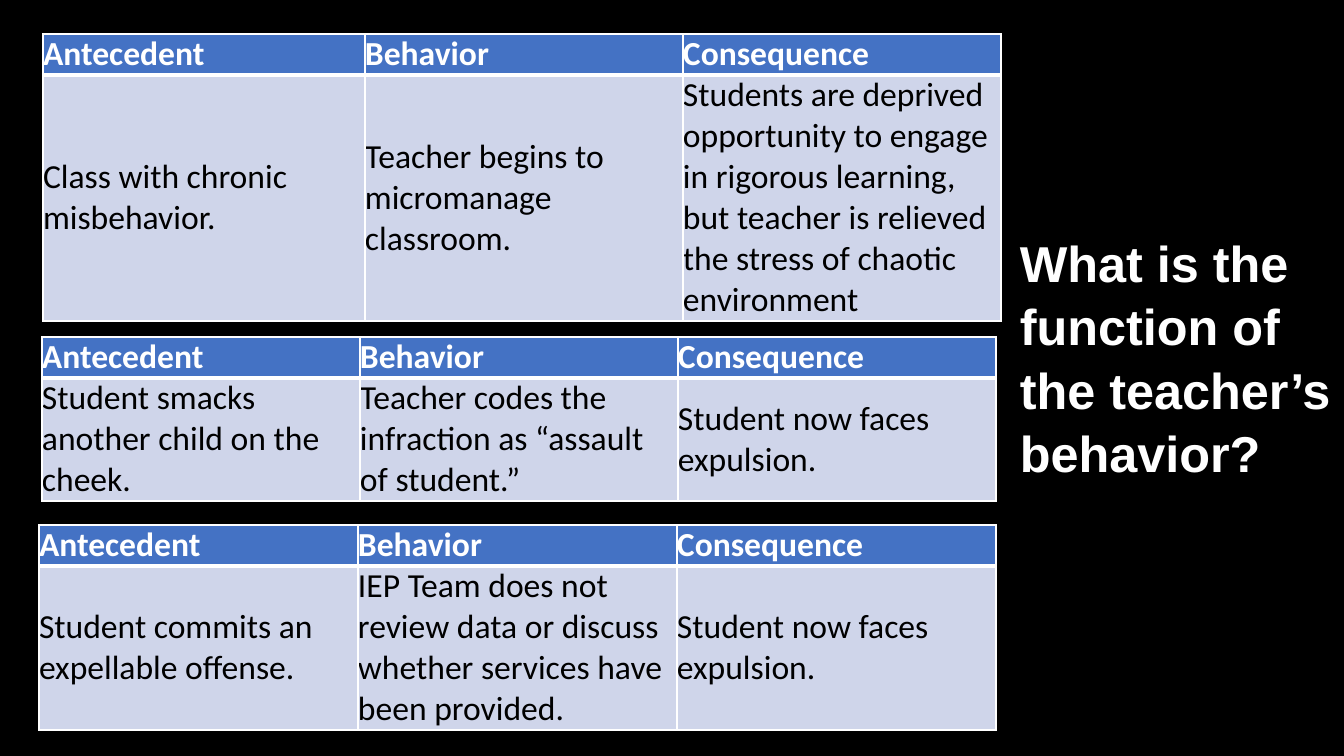
from dataclasses import dataclass

from lxml.etree import SubElement
from pptx import Presentation
from pptx.dml.color import RGBColor as RGB
from pptx.enum.text import MSO_ANCHOR as Anchor
from pptx.oxml import parse_xml
from pptx.oxml.ns import nsdecls, qn
from pptx.util import Emu, Pt


@dataclass(frozen=True)
class Theme:
    """Colours, fonts and type sizes of the slide."""
    back: str = "000000"
    head: str = "4472C4"
    body: str = "CFD5EA"
    light: str = "FFFFFF"
    dark: str = "000000"
    table_font: str = "Calibri"
    question_font: str = "Arial"
    table_size: int = 24
    question_size: int = 36


THEME = Theme()
HEADINGS = ("Antecedent", "Behavior", "Consequence")
HEAD_HEIGHT = 41
QUESTION = "What is the function of the teacher’s behavior?"
CASES = (
    ((43, 34, 958, 287), (322, 318, 318),
     ("Class with chronic misbehavior.",
      "Teacher begins to micromanage classroom.",
      "Students are deprived opportunity to engage in rigorous learning, "
      "but teacher is relieved the stress of chaotic environment")),
    ((42, 337, 954, 164), (318, 318, 318),
     ("Student smacks another child on the cheek.",
      "Teacher codes the infraction as “assault of student.”",
      "Student now faces expulsion.")),
    ((39, 525, 957, 205), (319, 319, 319),
     ("Student commits an expellable offense.",
      "IEP Team does not review data or discuss whether services have been provided.",
      "Student now faces expulsion.")),
)


def px(n):
    """Turn pixels into EMU."""
    return Emu(round(n * 914400 / 100.8))


def style_run(r, font, size, color, bold):
    """Set the look of a run."""
    r.font.name = font
    r.font.size = Pt(size)
    r.font.color.rgb = RGB.from_string(color)
    r.font.bold = bold


def add_borders(cell, bottom):
    """Draw light lines round a cell, the bottom one with its own width."""
    tc_pr = cell._tc.get_or_add_tcPr()
    for i, (side, width) in enumerate((("L", 1), ("R", 1), ("T", 1), ("B", bottom))):
        ln = parse_xml(f'<a:ln{side} {nsdecls("a")} w="{Pt(width)}"/>')
        fill = SubElement(ln, qn("a:solidFill"))
        SubElement(fill, qn("a:srgbClr"), val=THEME.light)
        tc_pr.insert(i, ln)


def fill_cell(cell, text, is_head):
    """Write and format one heading or body cell."""
    cell.text_frame.text = text
    cell.vertical_anchor = Anchor.MIDDLE
    cell.margin_left = cell.margin_right = cell.margin_top = cell.margin_bottom = 0
    cell.fill.solid()
    cell.fill.fore_color.rgb = RGB.from_string(THEME.head if is_head else THEME.body)
    style_run(cell.text_frame.paragraphs[0].runs[0], THEME.table_font,
              THEME.table_size, THEME.light if is_head else THEME.dark, is_head)
    add_borders(cell, 3 if is_head else 1)


def add_case(s, box, widths, texts):
    """Add one antecedent, behavior and consequence table."""
    table = s.shapes.add_table(2, len(HEADINGS), *map(px, box)).table
    for column, width in zip(table.columns, widths):
        column.width = px(width)
    for row, height in zip(table.rows, (HEAD_HEIGHT, box[3] - HEAD_HEIGHT)):
        row.height = px(height)
    for i, row in enumerate((HEADINGS, texts)):
        for j, text in enumerate(row):
            fill_cell(table.cell(i, j), text, i == 0)


def add_question(s, box):
    """Add the question beside the tables."""
    tf = s.shapes.add_textbox(*map(px, box)).text_frame
    tf.word_wrap = True
    tf.text = QUESTION
    p = tf.paragraphs[0]
    p.line_spacing = 1.05
    style_run(p.runs[0], THEME.question_font, THEME.question_size, THEME.light, True)


def main():
    """Build and save the slide."""
    prs = Presentation()
    prs.slide_width, prs.slide_height = px(1344), px(756)
    s = prs.slides.add_slide(prs.slide_layouts[6])
    s.background.fill.solid()
    s.background.fill.fore_color.rgb = RGB.from_string(THEME.back)
    for box, widths, texts in reversed(CASES):
        add_case(s, box, widths, texts)
    add_question(s, (1010, 224, 334, 254))
    prs.save("out.pptx")


if __name__ == "__main__":
    main()
